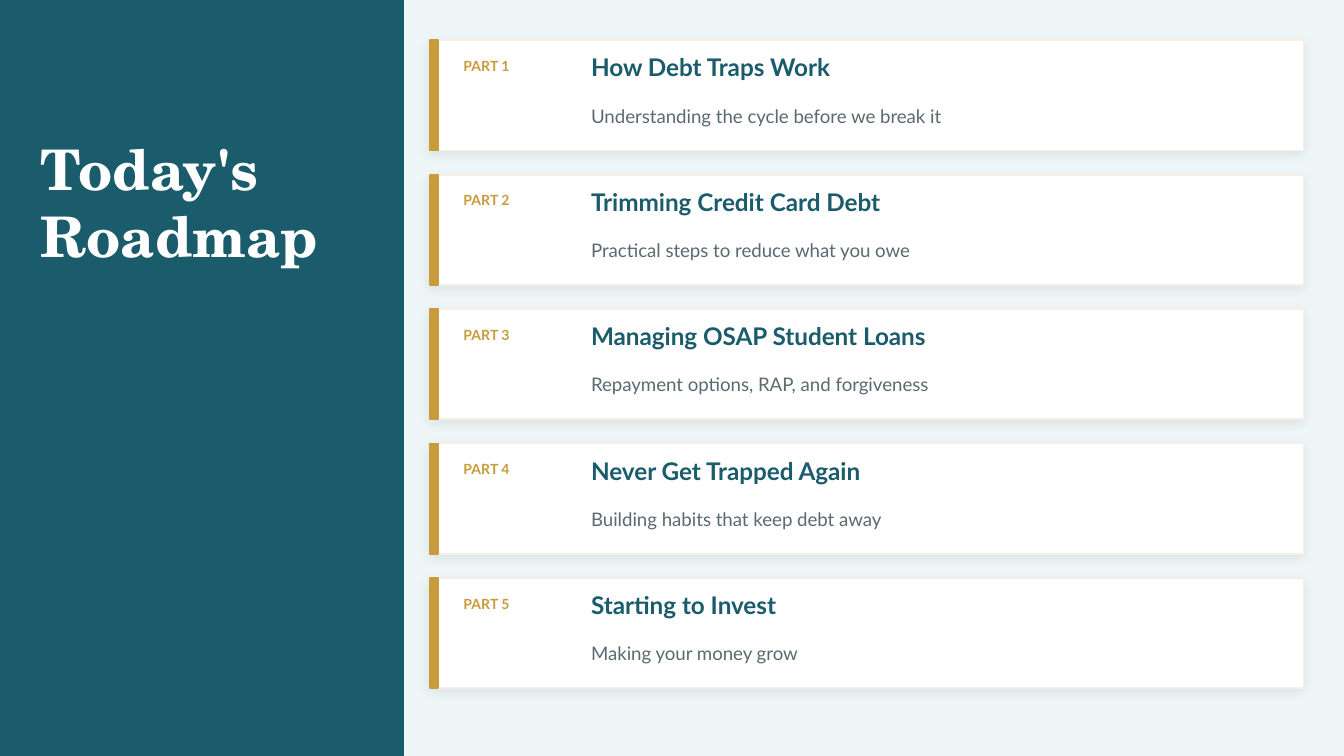
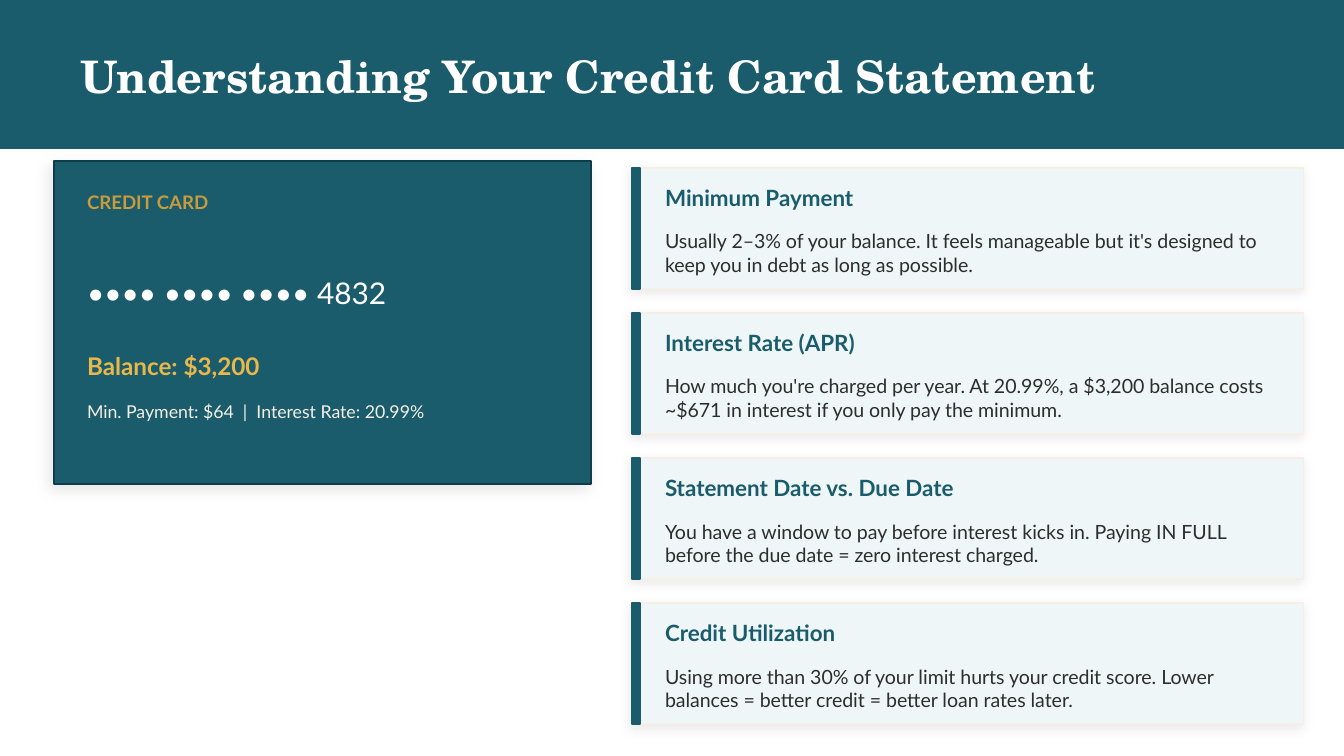
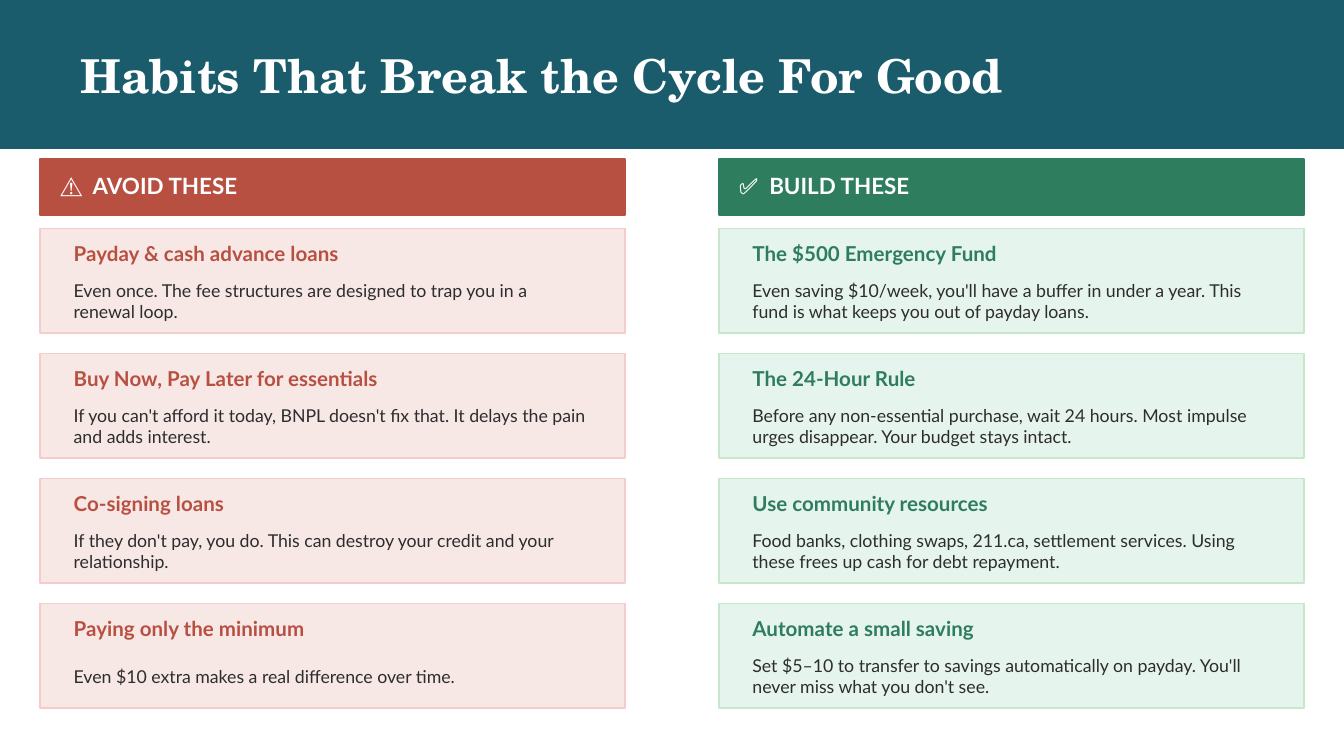
from dataclasses import dataclass

from lxml.etree import SubElement
from pptx import Presentation
from pptx.dml.color import RGBColor
from pptx.enum.shapes import MSO_SHAPE
from pptx.enum.text import MSO_ANCHOR, MSO_AUTO_SIZE, PP_ALIGN
from pptx.oxml.ns import qn
from pptx.util import Inches, Pt

# Square grid: 100 columns across the slide, rows of the same length
SLIDE_WIDTH, SLIDE_HEIGHT = Inches(10), Inches(5.625)
CELL = SLIDE_WIDTH // 100
COLUMNS, ROWS = 100, 56.25

TITLE_FONT, BODY_FONT = "TeX Gyre Schola", "Lato"

TEAL = RGBColor(0x1A, 0x5C, 0x6B)
DARK_TEAL = RGBColor(0x0D, 0x3D, 0x48)
MIST = RGBColor(0xEE, 0xF6, 0xF8)
WHITE = RGBColor(0xFF, 0xFF, 0xFF)
CREAM = RGBColor(0xF5, 0xEF, 0xE6)
GOLD = RGBColor(0xC8, 0x9B, 0x3C)
BRIGHT_GOLD = RGBColor(0xE8, 0xB8, 0x4B)
SLATE = RGBColor(0x5A, 0x6A, 0x70)
INK = RGBColor(0x2D, 0x2D, 0x2D)
RED = RGBColor(0xB8, 0x50, 0x42)
PALE_RED = RGBColor(0xF7, 0xE8, 0xE6)
RED_EDGE = RGBColor(0xF4, 0xCC, 0xCC)
GREEN = RGBColor(0x2E, 0x7D, 0x5E)
PALE_GREEN = RGBColor(0xE6, 0xF4, 0xEE)
GREEN_EDGE = RGBColor(0xC8, 0xE6, 0xC9)

ROADMAP = [
    ("How Debt Traps Work", "Understanding the cycle before we break it"),
    ("Trimming Credit Card Debt", "Practical steps to reduce what you owe"),
    ("Managing OSAP Student Loans", "Repayment options, RAP, and forgiveness"),
    ("Never Get Trapped Again", "Building habits that keep debt away"),
    ("Starting to Invest", "Making your money grow"),
]
STATEMENT_TERMS = [
    ("Minimum Payment",
     "Usually 2–3% of your balance. It feels manageable but it's designed to "
     "keep you in debt as long as possible."),
    ("Interest Rate (APR)",
     "How much you're charged per year. At 20.99%, a $3,200 balance costs "
     "~$671 in interest if you only pay the minimum."),
    ("Statement Date vs. Due Date",
     "You have a window to pay before interest kicks in. Paying IN FULL "
     "before the due date = zero interest charged."),
    ("Credit Utilization",
     "Using more than 30% of your limit hurts your credit score. Lower "
     "balances = better credit = better loan rates later."),
]
AVOID = [
    ("Payday & cash advance loans",
     "Even once. The fee structures are designed to trap you in a renewal loop."),
    ("Buy Now, Pay Later for essentials",
     "If you can't afford it today, BNPL doesn't fix that. It delays the pain "
     "and adds interest."),
    ("Co-signing loans",
     "If they don't pay, you do. This can destroy your credit and your "
     "relationship."),
    ("Paying only the minimum",
     "Even $10 extra makes a real difference over time."),
]
BUILD = [
    ("The $500 Emergency Fund",
     "Even saving $10/week, you'll have a buffer in under a year. This fund "
     "is what keeps you out of payday loans."),
    ("The 24-Hour Rule",
     "Before any non-essential purchase, wait 24 hours. Most impulse urges "
     "disappear. Your budget stays intact."),
    ("Use community resources",
     "Food banks, clothing swaps, 211.ca, settlement services. Using these "
     "frees up cash for debt repayment."),
    ("Automate a small saving",
     "Set $5–10 to transfer to savings automatically on payday. You'll never "
     "miss what you don't see."),
]


@dataclass
class Box:
    """A rectangle measured in grid cells."""
    left: float
    top: float
    width: float
    height: float

    def inside(self, left, top, width, height):
        return Box(self.left + left, self.top + top, width, height)

    def rows(self, count, height):
        """Split the box into equal rows with equal gaps."""
        step = (self.height - height) / (count - 1)
        return [self.inside(0, index * step, self.width, height)
                for index in range(count)]

    def lengths(self):
        return [round(value * CELL)
                for value in (self.left, self.top, self.width, self.height)]


# Shared building blocks

def add_shadow(shape, opacity, blur, distance):
    effects = shape.element.spPr.find(qn("a:effectLst"))
    shadow = SubElement(effects, qn("a:outerShdw"), blurRad=str(Pt(blur)),
                        dist=str(Pt(distance)), dir=str(135 * 60000),
                        algn="bl", rotWithShape="0")
    color = SubElement(shadow, qn("a:srgbClr"), val="000000")
    SubElement(color, qn("a:alpha"), val=str(opacity * 1000))


def add_rectangle(slide, box, fill, line=None, shadow=None):
    shape = slide.shapes.add_shape(MSO_SHAPE.RECTANGLE, *box.lengths())
    shape.fill.solid()
    shape.fill.fore_color.rgb = fill
    shape.line.color.rgb = line or fill
    shape.line.width = Pt(1)
    shape.shadow.inherit = False
    if shadow:
        add_shadow(shape, *shadow)
    return shape


def write_text(shape, text, *, size, color, bold=False, font=BODY_FONT):
    frame = shape.text_frame
    frame.text = text
    frame.word_wrap = True
    frame.auto_size = MSO_AUTO_SIZE.NONE
    frame.vertical_anchor = MSO_ANCHOR.MIDDLE
    for paragraph in frame.paragraphs:
        paragraph.alignment = PP_ALIGN.LEFT
        for run in paragraph.runs:
            run.font.name = font
            run.font.size = Pt(size)
            run.font.bold = bold
            run.font.color.rgb = color


def add_text(slide, box, text, **text_format):
    write_text(slide.shapes.add_textbox(*box.lengths()), text, **text_format)


def add_accent_card(slide, box, fill, accent):
    add_rectangle(slide, box, fill, CREAM, shadow=(8, 6, 2))
    add_rectangle(slide, box.inside(0, 0, 0.6, box.height), accent)


def add_titled_slide(presentation, background, band, title_box, title, size):
    slide = presentation.slides.add_slide(presentation.slide_layouts[5])
    slide.background.fill.solid()
    slide.background.fill.fore_color.rgb = background
    add_rectangle(slide, band, TEAL)
    heading = slide.shapes.title
    heading.left, heading.top, heading.width, heading.height = title_box.lengths()
    write_text(heading, title, size=size, color=WHITE, bold=True, font=TITLE_FONT)
    # Lift the title above its band
    slide.shapes.element.append(heading.element)
    return slide


def add_banner_slide(presentation, title, size):
    band = Box(0, 0, COLUMNS, 11)
    return add_titled_slide(presentation, WHITE, band,
                            band.inside(5, 2, 90, 7.2), title, size)


# Regions

def add_roadmap_part(slide, box, number, heading, summary):
    add_accent_card(slide, box, WHITE, GOLD)
    add_text(slide, box.inside(1.5, 0.5, 9, 2.8), f"PART {number}",
             size=7.5, color=GOLD, bold=True)
    add_text(slide, box.inside(11, 0.6, 52, 2.8), heading,
             size=13, color=TEAL, bold=True)
    add_text(slide, box.inside(11, 4.2, 52, 2.8), summary, size=10, color=SLATE)


def add_credit_card(slide, box):
    add_rectangle(slide, box, TEAL, DARK_TEAL, shadow=(10, 8, 3))
    lines = [
        (1, 4, "CREDIT CARD", 10, GOLD, True),
        (7.5, 4.5, "•••• •••• •••• 4832", 16, WHITE, False),
        (13.5, 3.5, "Balance: $3,200", 13, BRIGHT_GOLD, True),
        (17.2, 2.8, "Min. Payment: $64  |  Interest Rate: 20.99%", 9.5, CREAM, False),
    ]
    for top, height, text, size, color, bold in lines:
        add_text(slide, box.inside(1.5, top, box.width - 3, height), text,
                 size=size, color=color, bold=bold)


def add_statement_term(slide, box, heading, explanation):
    add_accent_card(slide, box, MIST, TEAL)
    width = box.width - 3
    add_text(slide, box.inside(1.5, 0.8, width, 2.8), heading,
             size=12, color=TEAL, bold=True)
    add_text(slide, box.inside(1.5, 4.2, width, 4.2), explanation,
             size=10.5, color=INK)


def add_habit_column(slide, box, label, habits, color, fill, edge):
    # Column header
    add_rectangle(slide, box.inside(0, 0, box.width, 4.2), color)
    add_text(slide, box.inside(0.5, 0.4, box.width - 1.5, 3.2), label,
             size=12, color=WHITE, bold=True)
    # Habit cards
    cards = box.inside(0, 5.2, box.width, box.height - 5.2)
    for card, (heading, reason) in zip(cards.rows(len(habits), 7.8), habits):
        add_rectangle(slide, card, fill, edge)
        width = card.width - 3
        add_text(slide, card.inside(1.5, 0.6, width, 2.5), heading,
                 size=11, color=color, bold=True)
        add_text(slide, card.inside(1.5, 3.6, width, 3.6), reason,
                 size=9.5, color=INK)


# Slides

def build_roadmap(presentation):
    sidebar = Box(0, 0, 30, ROWS)
    slide = add_titled_slide(presentation, MIST, sidebar,
                             sidebar.inside(2, 6, 26, 18), "Today's\nRoadmap", 30)
    parts = Box(32, 3, 65, 48.2).rows(len(ROADMAP), 8.2)
    for number, (box, part) in enumerate(zip(parts, ROADMAP), 1):
        add_roadmap_part(slide, box, number, *part)


def build_statement(presentation):
    slide = add_banner_slide(presentation,
                             "Understanding Your Credit Card Statement", 24)
    add_credit_card(slide, Box(4, 12, 40, 24))
    boxes = Box(47, 12.5, 50, 41.4).rows(len(STATEMENT_TERMS), 9)
    for box, term in zip(boxes, STATEMENT_TERMS):
        add_statement_term(slide, box, *term)


def build_habits(presentation):
    slide = add_banner_slide(presentation,
                             "Habits That Break the Cycle For Good", 25)
    width, margin = 43.5, 3
    add_habit_column(slide, Box(margin, 11.8, width, 40.9), "⚠️  AVOID THESE",
                     AVOID, RED, PALE_RED, RED_EDGE)
    add_habit_column(slide, Box(COLUMNS - margin - width, 11.8, width, 40.9),
                     "✅  BUILD THESE", BUILD, GREEN, PALE_GREEN, GREEN_EDGE)


def main():
    presentation = Presentation()
    presentation.slide_width = SLIDE_WIDTH
    presentation.slide_height = SLIDE_HEIGHT
    build_roadmap(presentation)
    build_statement(presentation)
    build_habits(presentation)
    presentation.save("out.pptx")


if __name__ == "__main__":
    main()
